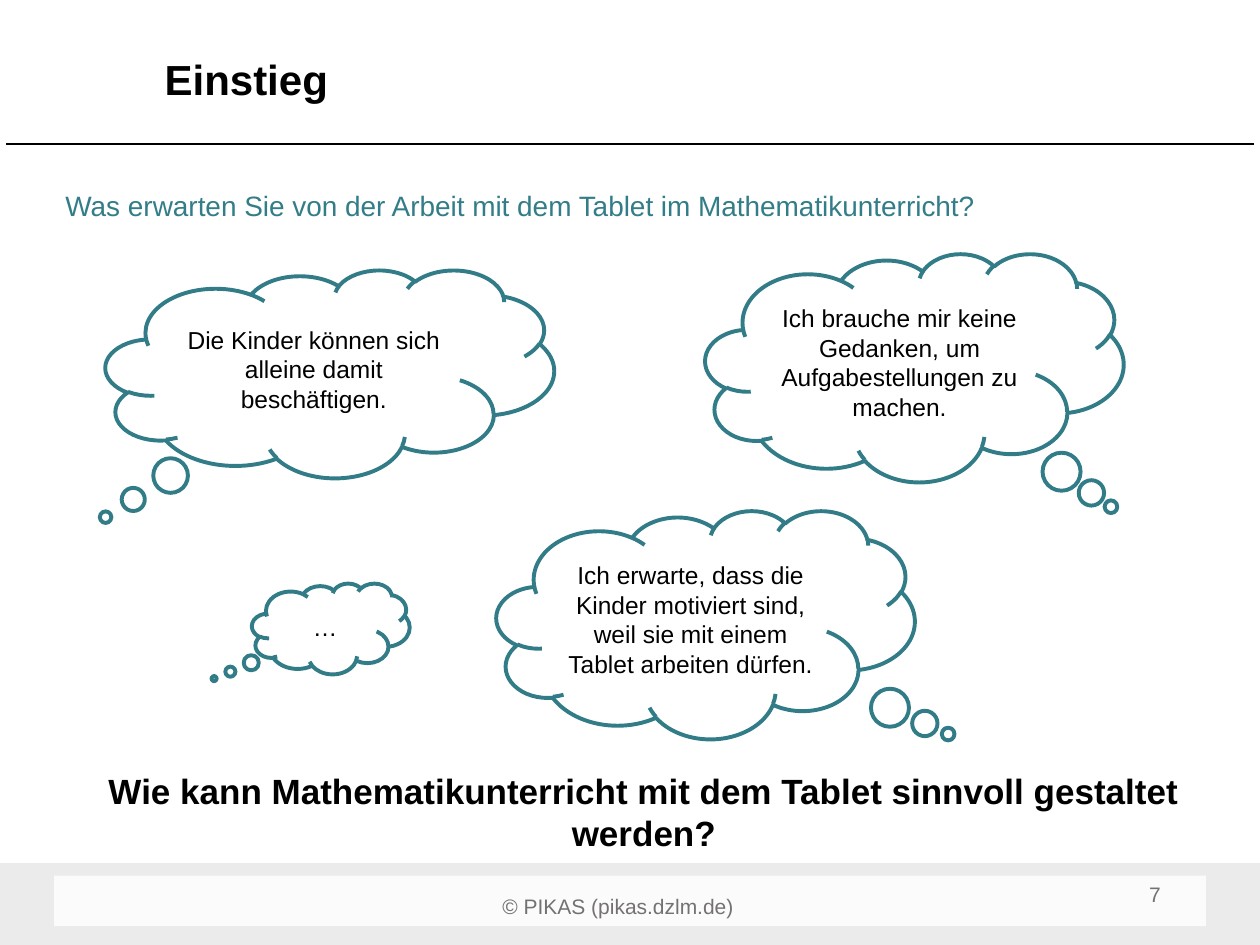
from lxml.etree import SubElement
from pptx import Presentation
from pptx.dml.color import RGBColor
from pptx.enum.shapes import MSO_CONNECTOR as CONN, MSO_SHAPE as SHAPE
from pptx.enum.text import MSO_ANCHOR as ANCHOR, PP_ALIGN as ALIGN
from pptx.oxml.ns import qn
from pptx.util import Cm, Pt

BLACK, WHITE, BAND = "000000", "FFFFFF", "D9D9D9"
GREY, TEAL, OUTLINE = "767171", "327D87", "327C88"

CLOUDS = [
    ("Die Kinder können sich alleine damit beschäftigen.",
     (2.13, 5.44, 9.04, 4.19), (-0.5, 0.69)),
    ("Ich brauche mir keine Gedanken, um Aufgabestellungen zu machen.",
     (14.22, 5.11, 8.43, 4.6), (0.47, 0.61)),
    ("Ich erwarte, dass die Kinder motiviert sind, weil sie mit einem Tablet arbeiten dürfen.",
     (10.01, 10.29, 8.43, 4.6), (0.58, 0.48)),
    ("…", (5.08, 11.76, 3.18, 1.83), (-0.74, 0.55)),
]


def set_attrs(obj, values):
    for name, value in values.items():
        setattr(obj, name, value)


def paint(color_format, hex_color):
    color_format.rgb = RGBColor.from_string(hex_color)


def set_line(line, hex_color, width):
    paint(line.color, hex_color)
    line.width = Pt(width)


def write(sp, text, size, color=BLACK, bold=False, anchor=ANCHOR.TOP, **para):
    tf = sp.text_frame
    set_attrs(tf, {"word_wrap": True, "vertical_anchor": anchor})
    p = tf.paragraphs[0]
    set_attrs(p, para)
    r = p.add_run()
    r.text = text
    set_attrs(r.font, {"name": "Arial", "size": Pt(size), "bold": bold})
    paint(r.font.color, color)


def add_text(s, box, text, size, **fmt):
    write(s.shapes.add_textbox(*map(Cm, box)), text, size, **fmt)


def add_panel(s, box, color, opacity):
    sp = s.shapes.add_shape(SHAPE.RECTANGLE, *map(Cm, box))
    sp.shadow.inherit = False
    sp.line.fill.background()
    sp.fill.solid()
    paint(sp.fill.fore_color, color)
    clr = sp.fill._xPr.find(qn("a:solidFill"))[0]
    SubElement(clr, qn("a:alpha")).set("val", str(opacity * 1000))


def add_rule(s, x1, x2, y):
    cx = s.shapes.add_connector(CONN.STRAIGHT, Cm(x1), Cm(y), Cm(x2), Cm(y))
    set_line(cx.line, BLACK, 1)
    SubElement(cx._element.spPr, qn("a:effectLst"))


def add_cloud(s, text, box, tail):
    sp = s.shapes.add_shape(SHAPE.CLOUD_CALLOUT, *map(Cm, box))
    sp.shadow.inherit = False
    sp.fill.background()
    set_line(sp.line, OUTLINE, 2.25)
    for i, value in enumerate(tail):
        sp.adjustments[i] = value
    write(sp, text, 14, anchor=ANCHOR.MIDDLE, alignment=ALIGN.CENTER)


def main():
    prs = Presentation()
    set_attrs(prs, {"slide_width": Cm(25.4), "slide_height": Cm(19.05)})
    s = prs.slides.add_slide(prs.slide_layouts[6])

    add_rule(s, 0.13, 25.27, 2.9)
    add_panel(s, (0, 17.4, 25.4, 1.65), BAND, 50)
    add_panel(s, (1.09, 17.65, 23.22, 1.02), WHITE, 80)
    add_text(s, (9.6, 17.6, 5.72, 1.09), "© PIKAS (pikas.dzlm.de)", 12, color=GREY,
             anchor=ANCHOR.MIDDLE, alignment=ALIGN.CENTER, line_spacing=1.5)
    add_text(s, (3.07, 1.07, 22.33, 1.68), "Einstieg", 24, bold=True, line_spacing=0.9)
    add_text(s, (1.07, 3.33, 23.27, 1.68),
             "Was erwarten Sie von der Arbeit mit dem Tablet im Mathematikunterricht?",
             16, color=TEAL, line_spacing=1.5)
    add_text(s, (17.93, 17.65, 5.72, 1.02), "7", 12, color=GREY, alignment=ALIGN.RIGHT)
    for text, box, tail in CLOUDS:
        add_cloud(s, text, box, tail)
    add_text(s, (0.56, 15.39, 24.84, 1.96),
             "Wie kann Mathematikunterricht mit dem Tablet sinnvoll gestaltet werden?",
             20, bold=True, alignment=ALIGN.CENTER)
    prs.save("out.pptx")


if __name__ == "__main__":
    main()
